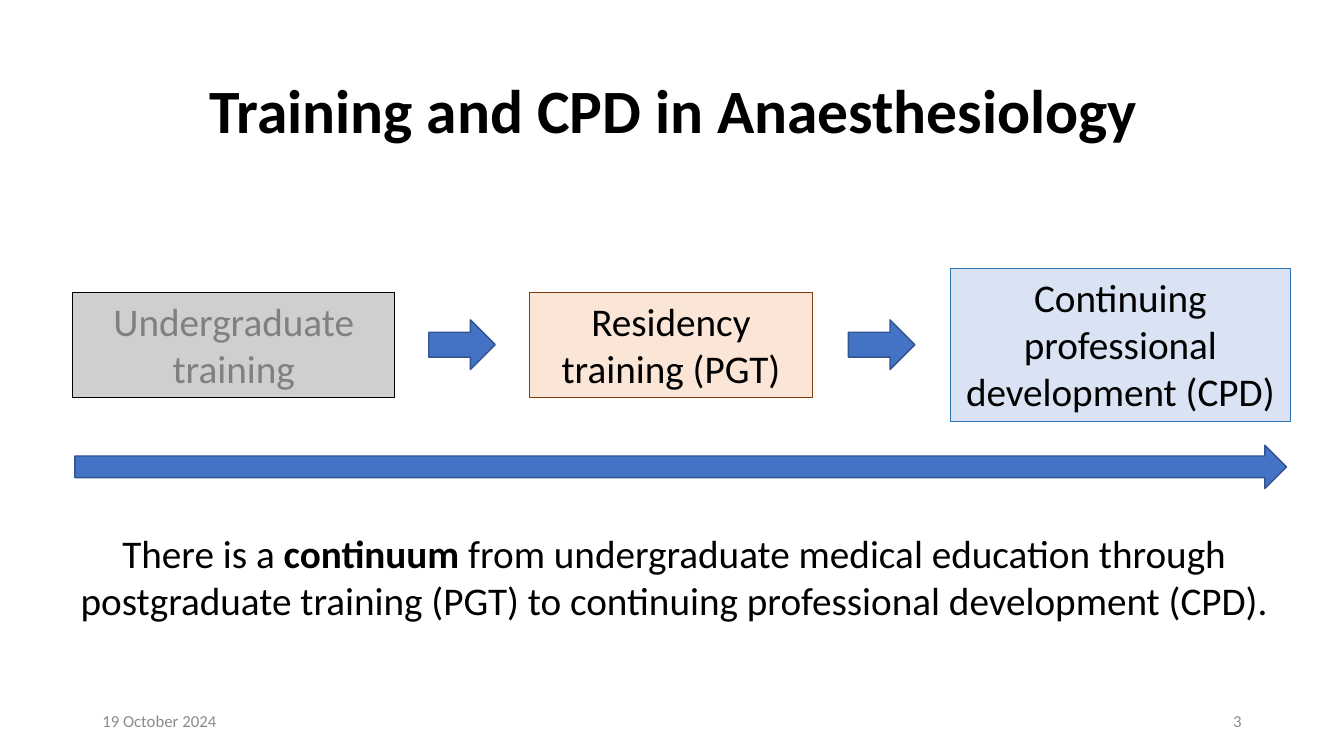
from pptx import Presentation
from pptx.dml.color import RGBColor
from pptx.enum.shapes import MSO_SHAPE
from pptx.enum.text import MSO_ANCHOR, PP_ALIGN
from pptx.util import Pt

RECT, ARROW = MSO_SHAPE.RECTANGLE, MSO_SHAPE.RIGHT_ARROW
TOP, MIDDLE = MSO_ANCHOR.TOP, MSO_ANCHOR.MIDDLE
LEFT, CENTER, RIGHT = PP_ALIGN.LEFT, PP_ALIGN.CENTER, PP_ALIGN.RIGHT

BLACK = RGBColor(0x00, 0x00, 0x00)
GREY = RGBColor(0x80, 0x80, 0x80)
FOOTER_GREY = RGBColor(0x8C, 0x8C, 0x8C)
SILVER = RGBColor(0xD0, 0xCE, 0xCE)
PEACH = RGBColor(0xFB, 0xE5, 0xD6)
BROWN = RGBColor(0x84, 0x3C, 0x0B)
PALE_BLUE = RGBColor(0xDA, 0xE3, 0xF3)
MID_BLUE = RGBColor(0x2E, 0x75, 0xB6)
BLUE = RGBColor(0x44, 0x72, 0xC4)
DARK_BLUE = RGBColor(0x32, 0x54, 0x91)

# Content: stages are (text, left, width, height, fill, outline, text colour)
TITLE = "Training and CPD in Anaesthesiology"
STAGES = [
    ("Undergraduate training", 52, 230, 75, SILVER, BLACK, GREY),
    ("Residency training (PGT)", 378, 202.5, 75, PEACH, BROWN, BLACK),
    ("Continuing professional development (CPD)", 679, 242.5, 109,
     PALE_BLUE, MID_BLUE, BLACK),
]
SUMMARY = [  # (text, bold)
    ("There is a ", False),
    ("continuum", True),
    (" from undergraduate medical education through postgraduate training "
     "(PGT) to continuing professional development (CPD).", False),
]
DATE, PAGE = "19 October 2024", "3"

# Layout
ROW_MIDDLE = 246.25
STEP_W, STEP_H = 47.5, 35.5
FOOTER_TOP, FOOTER_W, FOOTER_H = 500.5, 216, 28.75

deck = Presentation()
deck.slide_width, deck.slide_height = Pt(960), Pt(540)
slide = deck.slides.add_slide(deck.slide_layouts[6])


def write(frame, runs, size, color, align=CENTER, anchor=TOP, spacing=None):
    frame.word_wrap = True
    frame.vertical_anchor = anchor
    paragraph = frame.paragraphs[0]
    paragraph.alignment = align
    paragraph.line_spacing = spacing
    for text, bold in runs:
        run = paragraph.add_run()
        run.text = text
        run.font.name = "Calibri"
        run.font.size = Pt(size)
        run.font.bold = bold
        run.font.color.rgb = color


def add_text(left, top, width, height, runs, size, color, **style):
    box = slide.shapes.add_textbox(Pt(left), Pt(top), Pt(width), Pt(height))
    write(box.text_frame, runs, size, color, **style)


def add_figure(kind, left, top, width, height, fill, outline, weight):
    figure = slide.shapes.add_shape(kind, Pt(left), Pt(top), Pt(width), Pt(height))
    figure.shadow.inherit = False
    figure.fill.solid()
    figure.fill.fore_color.rgb = fill
    figure.line.color.rgb = outline
    figure.line.width = Pt(weight)
    return figure


# Title
add_text(67.5, 43.5, 828, 75, [(TITLE, True)], 44, BLACK,
         anchor=MIDDLE, spacing=0.9)

# Stages on one middle line
for text, left, width, height, fill, outline, color in STAGES:
    stage = add_figure(RECT, left, ROW_MIDDLE - height / 2, width, height,
                       fill, outline, 0.75)
    write(stage.text_frame, [(text, False)], 28, color)

# Step arrows centred in the gaps between stages
for before, after in zip(STAGES, STAGES[1:]):
    gap_middle = (before[1] + before[2] + after[1]) / 2
    add_figure(ARROW, gap_middle - STEP_W / 2, ROW_MIDDLE - STEP_H / 2,
               STEP_W, STEP_H, BLUE, DARK_BLUE, 1)

# Continuum arrow and summary
add_figure(ARROW, 53.5, 318, 865.5, 31, BLUE, DARK_BLUE, 1)
add_text(49, 374.5, 865, 75, SUMMARY, 28, BLACK)

# Footer
for text, left, align in [(DATE, 66, LEFT), (PAGE, 678, RIGHT)]:
    add_text(left, FOOTER_TOP, FOOTER_W, FOOTER_H, [(text, False)], 12,
             FOOTER_GREY, align=align, anchor=MIDDLE)

deck.save("out.pptx")
